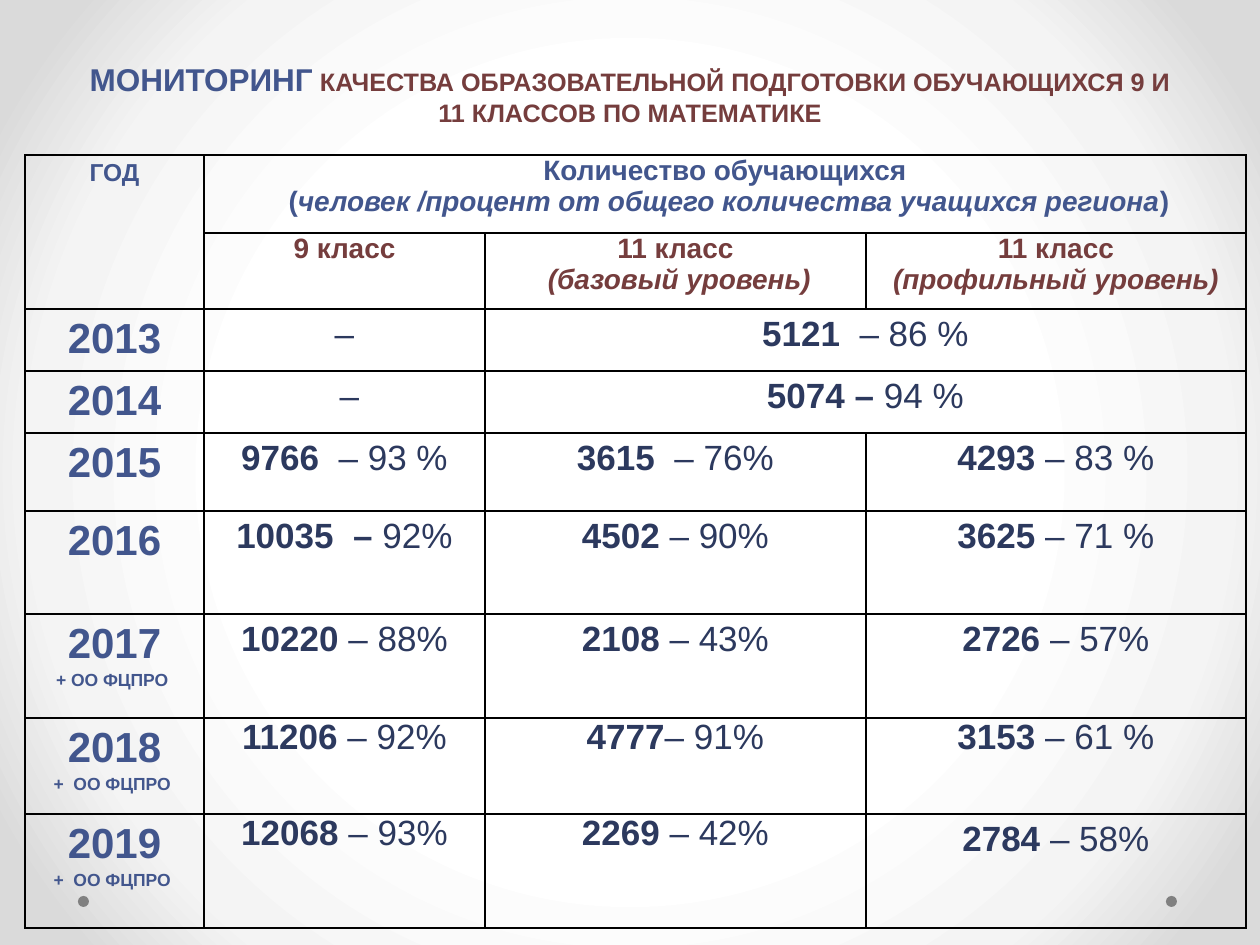
import pptx
import pptx.util
import pptx.dml.color
import pptx.enum.shapes
import pptx.enum.text
import pptx.oxml
import pptx.oxml.ns

RGB = pptx.dml.color.RGBColor
BLUE = RGB(0x42, 0x56, 0x8D)
RED = RGB(0x75, 0x3D, 0x3D)
NAVY = RGB(0x2C, 0x39, 0x5E)
GRAY = RGB(0x80, 0x80, 0x80)
CENTER = pptx.enum.text.PP_ALIGN.CENTER
NS = pptx.oxml.ns.nsdecls("a")

COLS = [179, 281, 381, 380]
ROWS = [78, 76, 62, 62, 78, 103, 104, 96, 114]

# Year, note, line spacing, then (bold, plain) parts for each value cell
DATA = [
    ("2013", "", 1.15, [("", "–"), ("5121", "  – 86 %")]),
    ("2014", "", 1.15, [("", " –"), ("5074 – ", "94 %")]),
    ("2015", "", 1.15, [("9766", "  – 93 %"), ("3615", "  – 76%"),
                        ("4293", " – 83 %")]),
    ("2016", "", 1.15, [("10035  –", " 92%"), ("4502", " – 90%"),
                        ("3625 ", "– 71 %")]),
    ("2017", "+ ОО ФЦПРО ", 1.15, [("10220", " – 88%"), ("2108", " – 43%"),
                                   ("2726", " – 57%")]),
    ("2018", "+  ОО ФЦПРО ", 1, [("11206 ", "– 92%"), ("4777", "– 91%"),
                                 ("3153 ", "– 61 %")]),
    ("2019", "+  ОО ФЦПРО ", 1, [("12068", " – 93%"), ("2269 ", "– 42%"),
                                 ("2784 ", "– 58%")]),
]


def px(n):
    return pptx.util.Emu(round(n * 914400 / 126))


def write(frame, paras, space=1.0):
    """Each paragraph is a list of (text, size, color, bold, italic)."""
    for i, runs in enumerate(paras):
        para = frame.add_paragraph() if i else frame.paragraphs[0]
        para.alignment = CENTER
        para.line_spacing = space
        for text, size, color, bold, ital in runs:
            run = para.add_run()
            run.text = text
            font = run.font
            font.name = "Arial"
            font.size = pptx.util.Pt(size)
            font.color.rgb = color
            font.bold = bold
            font.italic = ital


def paint(slide):
    """Radial backdrop, white in the middle."""
    slide.background.fill.gradient()
    grad = slide.element.xpath(".//p:bg//a:gradFill")[0]
    for child in list(grad):
        grad.remove(child)
    stops = "".join(
        f'<a:gs pos="{pos}000"><a:srgbClr val="{color}"/></a:gs>'
        for pos, color in [(50, "FFFFFF"), (76, "F4F4F4"), (92, "DADADA")])
    grad.append(pptx.oxml.parse_xml(f"<a:gsLst {NS}>{stops}</a:gsLst>"))
    grad.append(pptx.oxml.parse_xml(
        f'<a:path {NS} path="circle"><a:fillToRect l="50000" t="50000" '
        'r="50000" b="50000"/></a:path>'))


def add_dot(slide, left):
    dot = slide.shapes.add_shape(pptx.enum.shapes.MSO_SHAPE.OVAL,
                                 px(left), px(896), px(11), px(11))
    dot.shadow.inherit = False
    dot.fill.solid()
    dot.fill.fore_color.rgb = GRAY
    dot.line.fill.background()


def add_title(slide):
    box = slide.shapes.add_textbox(px(63), px(60), px(1134), px(68))
    frame = box.text_frame
    frame.word_wrap = True
    frame.margin_top = frame.margin_bottom = 0
    write(frame, [[
        ("МОНИТОРИНГ", 18, BLUE, True, False),
        (" КАЧЕСТВА ОБРАЗОВАТЕЛЬНОЙ ПОДГОТОВКИ ОБУЧАЮЩИХСЯ 9 И 11 КЛАССОВ "
         "ПО МАТЕМАТИКЕ", 14.4, RED, True, False)]])


def style(cell):
    cell.margin_left = cell.margin_right = px(9)
    cell.margin_top = cell.margin_bottom = 0
    props = cell._tc.get_or_add_tcPr()
    for side in "LRTB":
        props.append(pptx.oxml.parse_xml(
            f'<a:ln{side} {NS} w="12700"><a:solidFill>'
            f'<a:srgbClr val="000000"/></a:solidFill></a:ln{side}>'))
    cell.fill.background()


def add_grid(slide):
    frame = slide.shapes.add_table(len(ROWS), len(COLS), px(25), px(155),
                                   px(sum(COLS)), px(sum(ROWS)))
    table = frame.table
    table.first_row = table.horz_banding = False
    for col, width in zip(table.columns, COLS):
        col.width = px(width)
    for row, height in zip(table.rows, ROWS):
        row.height = px(height)
    for cell in table.iter_cells():
        style(cell)
    return table


def fill_head(table):
    table.cell(0, 0).merge(table.cell(1, 0))
    table.cell(0, 1).merge(table.cell(0, 3))
    write(table.cell(0, 0).text_frame,
          [[("ГОД", 14, BLUE, True, False)]], 1.15)
    write(table.cell(0, 1).text_frame, [
        [("Количество обучающихся", 16, BLUE, True, False)],
        [(" (", 16, BLUE, True, False),
         ("человек /процент от общего количества учащихся региона",
          16, BLUE, True, True),
         (")", 16, BLUE, True, False)]])
    heads = [("9 класс", ""), ("11 класс", " (базовый уровень)"),
             ("11 класс", "(профильный уровень)")]
    for c, (name, level) in enumerate(heads, 1):
        paras = [[(name, 16, RED, True, False)]]
        if level:
            paras.append([(level, 16, RED, True, True)])
        write(table.cell(1, c).text_frame, paras)


def fill_body(table):
    for r, (year, note, space, values) in enumerate(DATA, 2):
        paras = [[(year, 24, BLUE, True, False)]]
        if note:
            paras.append([(note, 10, BLUE, True, False)])
        write(table.cell(r, 0).text_frame, paras, 1.15)
        # Two values mean that both levels of class 11 share a cell
        if len(values) == 2:
            table.cell(r, 2).merge(table.cell(r, 3))
        for c, (bold, plain) in enumerate(values, 1):
            runs = [(text, 20, NAVY, heavy, False)
                    for text, heavy in [(bold, True), (plain, False)] if text]
            last = (year, c) == ("2019", 3)
            write(table.cell(r, c).text_frame, [runs], 1.15 if last else space)


def main():
    deck = pptx.Presentation()
    deck.slide_width, deck.slide_height = px(1260), px(945)
    slide = deck.slides.add_slide(deck.slide_layouts[6])
    paint(slide)
    for left in (1166, 78):
        add_dot(slide, left)
    add_title(slide)
    table = add_grid(slide)
    fill_head(table)
    fill_body(table)
    deck.save("out.pptx")


if __name__ == "__main__":
    main()
